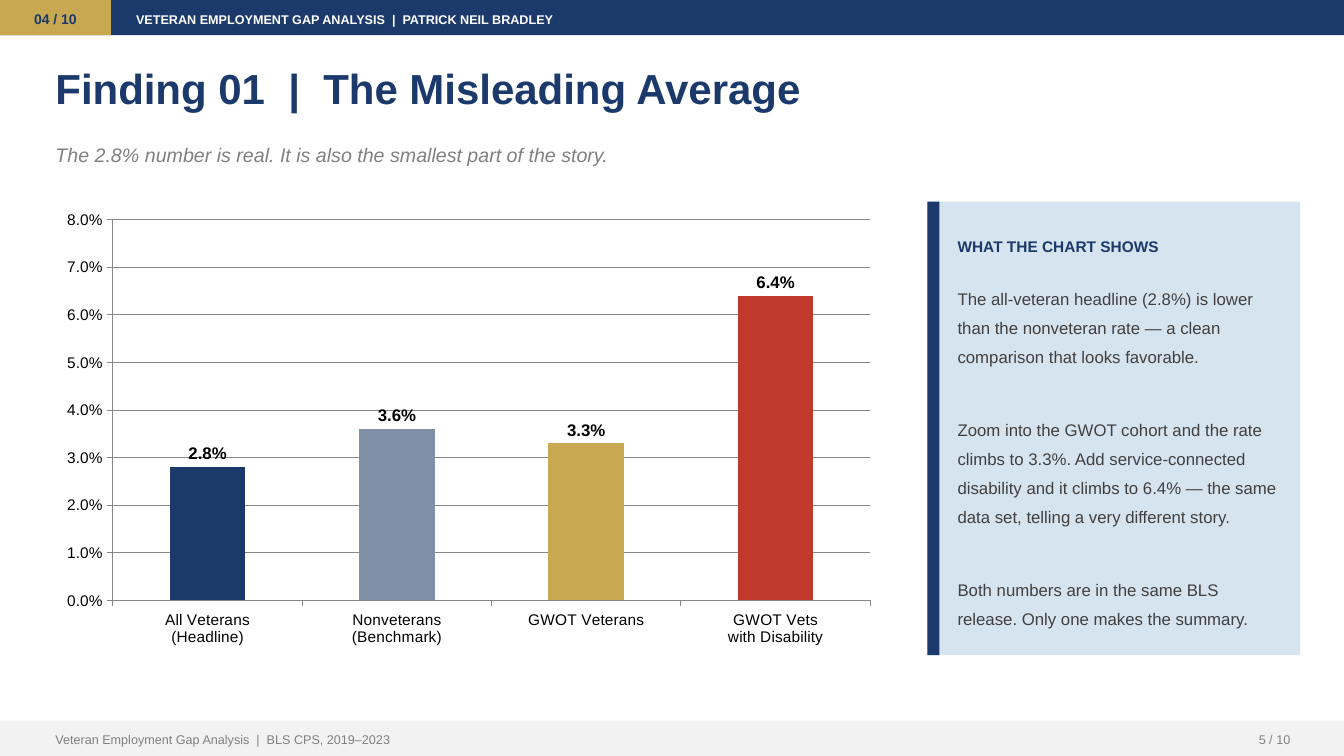
from pptx import Presentation
from pptx.chart.data import CategoryChartData
from pptx.dml.color import RGBColor
from pptx.enum.chart import XL_CHART_TYPE, XL_LABEL_POSITION, XL_TICK_MARK
from pptx.enum.shapes import MSO_SHAPE
from pptx.enum.text import MSO_ANCHOR, PP_ALIGN
from pptx.util import Pt

COLUMNS = XL_CHART_TYPE.COLUMN_CLUSTERED
OUTSIDE_END = XL_LABEL_POSITION.OUTSIDE_END
TICK_OUTSIDE = XL_TICK_MARK.OUTSIDE
RECTANGLE = MSO_SHAPE.RECTANGLE
TOP, MIDDLE = MSO_ANCHOR.TOP, MSO_ANCHOR.MIDDLE
LEFT, CENTER, RIGHT = PP_ALIGN.LEFT, PP_ALIGN.CENTER, PP_ALIGN.RIGHT

FONT = "Arial"
PERCENT = "0.0%"
NAVY, GOLD, SLATE, RED = "1B3A6B", "C8A951", "7F8FA6", "C0392B"
WHITE, BLACK, GRAY, DARK_GRAY = "FFFFFF", "000000", "808080", "404040"
PALE_BLUE, PALE_GRAY, AXIS_GRAY = "D6E4F0", "F2F2F2", "878787"

SLIDE_W, SLIDE_H = 960, 540
BAND_H = 25.2
FOOTER_TOP = SLIDE_H - BAND_H
MARGIN = 36
CONTENT_W = 885.6
BODY_TOP, BODY_H = 144, 324
PANEL_LEFT, PANEL_W = 662.4, 266.4
PANEL_TEXT_LEFT, PANEL_TEXT_W = 680.4, 237.6

RATES = [
    ("All Veterans\n(Headline)", 0.028, NAVY),
    ("Nonveterans\n(Benchmark)", 0.036, SLATE),
    ("GWOT Veterans", 0.033, GOLD),
    ("GWOT Vets\nwith Disability", 0.064, RED),
]
EXPLANATION = [
    "The all-veteran headline (2.8%) is lower than the nonveteran rate — "
    "a clean comparison that looks favorable.",
    "Zoom into the GWOT cohort and the rate climbs to 3.3%. Add "
    "service-connected disability and it climbs to 6.4% — the same data set, "
    "telling a very different story.",
    "Both numbers are in the same BLS release. Only one makes the summary.",
]


def rgb(color):
    return RGBColor.from_string(color)


def style_font(font, size, color, bold=False, italic=False):
    font.name = FONT
    font.size = Pt(size)
    font.color.rgb = rgb(color)
    font.bold = bold
    font.italic = italic


def add_block(slide, left, top, width, height, color):
    block = slide.shapes.add_shape(RECTANGLE, Pt(left), Pt(top), Pt(width), Pt(height))
    block.shadow.inherit = False
    block.fill.solid()
    block.fill.fore_color.rgb = rgb(color)
    block.line.fill.background()


def add_text(slide, left, top, width, height, paragraphs, size, color, bold=False,
             italic=False, align=LEFT, anchor=TOP, spacing=1.2, gap=0):
    box = slide.shapes.add_textbox(Pt(left), Pt(top), Pt(width), Pt(height))
    frame = box.text_frame
    frame.word_wrap = True
    frame.vertical_anchor = anchor
    frame.margin_left = frame.margin_right = Pt(3.6)
    frame.margin_top = frame.margin_bottom = Pt(1.44)
    for index, text in enumerate(paragraphs):
        paragraph = frame.add_paragraph() if index else frame.paragraphs[0]
        paragraph.alignment = align
        paragraph.line_spacing = spacing
        if index:
            paragraph.space_before = Pt(gap)
        run = paragraph.add_run()
        run.text = text
        style_font(run.font, size, color, bold, italic)


def style_axis(axis):
    axis.major_tick_mark = TICK_OUTSIDE
    axis.format.line.color.rgb = rgb(AXIS_GRAY)
    style_font(axis.tick_labels.font, 11, BLACK)


def add_rate_chart(slide):
    labels, rates, colors = zip(*RATES)
    data = CategoryChartData(number_format=PERCENT)
    data.categories = labels
    data.add_series("Series 1", rates)
    chart = slide.shapes.add_chart(
        COLUMNS, Pt(MARGIN), Pt(BODY_TOP), Pt(597.6), Pt(BODY_H), data).chart
    chart.has_legend = False
    chart.has_title = False
    style_font(chart.font, 11, BLACK)

    style_axis(chart.category_axis)
    rate_axis = chart.value_axis
    style_axis(rate_axis)
    rate_axis.minimum_scale = 0
    rate_axis.maximum_scale = 0.08
    rate_axis.major_unit = 0.01
    rate_axis.has_major_gridlines = True
    rate_axis.major_gridlines.format.line.color.rgb = rgb(AXIS_GRAY)
    rate_axis.tick_labels.number_format = PERCENT
    rate_axis.tick_labels.number_format_is_linked = False

    plot = chart.plots[0]
    plot.vary_by_categories = False
    plot.gap_width = 150
    columns = plot.series[0]
    for index, color in enumerate(colors):
        fill = columns.points[index].format.fill
        fill.solid()
        fill.fore_color.rgb = rgb(color)
    rate_labels = columns.data_labels
    rate_labels.show_value = True
    rate_labels.position = OUTSIDE_END
    rate_labels.number_format = PERCENT
    rate_labels.number_format_is_linked = False
    style_font(rate_labels.font, 12, BLACK, bold=True)


def add_header(slide):
    add_block(slide, 0, 0, SLIDE_W, BAND_H, NAVY)
    add_block(slide, 0, 0, 79.2, BAND_H, GOLD)
    add_text(slide, 0, 0, 79.2, BAND_H, ["04 / 10"], 10, NAVY,
             bold=True, align=CENTER, anchor=MIDDLE)
    add_text(slide, 93.6, 0, 792, BAND_H,
             ["VETERAN EMPLOYMENT GAP ANALYSIS  |  PATRICK NEIL BRADLEY"],
             9, WHITE, bold=True, anchor=MIDDLE)


def add_headline(slide):
    add_text(slide, MARGIN, 39.6, CONTENT_W, 64.8,
             ["Finding 01  |  The Misleading Average"], 30, NAVY, bold=True, spacing=1.1)
    add_text(slide, MARGIN, 97.2, CONTENT_W, 36,
             ["The 2.8% number is real. It is also the smallest part of the story."],
             14, GRAY, italic=True)


def add_explanation_panel(slide):
    add_block(slide, PANEL_LEFT, BODY_TOP, PANEL_W, BODY_H, PALE_BLUE)
    add_block(slide, PANEL_LEFT, BODY_TOP, 8.64, BODY_H, NAVY)
    add_text(slide, PANEL_TEXT_LEFT, 165.6, PANEL_TEXT_W, 28.8,
             ["WHAT THE CHART SHOWS"], 11, NAVY, bold=True)
    add_text(slide, PANEL_TEXT_LEFT, 198, PANEL_TEXT_W, 252, EXPLANATION,
             12, DARK_GRAY, spacing=1.45, gap=31)


def add_footer(slide):
    add_block(slide, 0, FOOTER_TOP, SLIDE_W, BAND_H, PALE_GRAY)
    add_text(slide, MARGIN, FOOTER_TOP, 576, BAND_H,
             ["Veteran Employment Gap Analysis  |  BLS CPS, 2019–2023"],
             9, GRAY, anchor=MIDDLE)
    add_text(slide, 842.4, FOOTER_TOP, 82.8, BAND_H, ["5 / 10"], 9, GRAY,
             align=RIGHT, anchor=MIDDLE)


def main():
    deck = Presentation()
    deck.slide_width, deck.slide_height = Pt(SLIDE_W), Pt(SLIDE_H)
    slide = deck.slides.add_slide(deck.slide_layouts[6])
    slide.background.fill.solid()
    slide.background.fill.fore_color.rgb = rgb(WHITE)
    add_header(slide)
    add_headline(slide)
    add_rate_chart(slide)
    add_explanation_panel(slide)
    add_footer(slide)
    deck.save("out.pptx")


if __name__ == "__main__":
    main()
